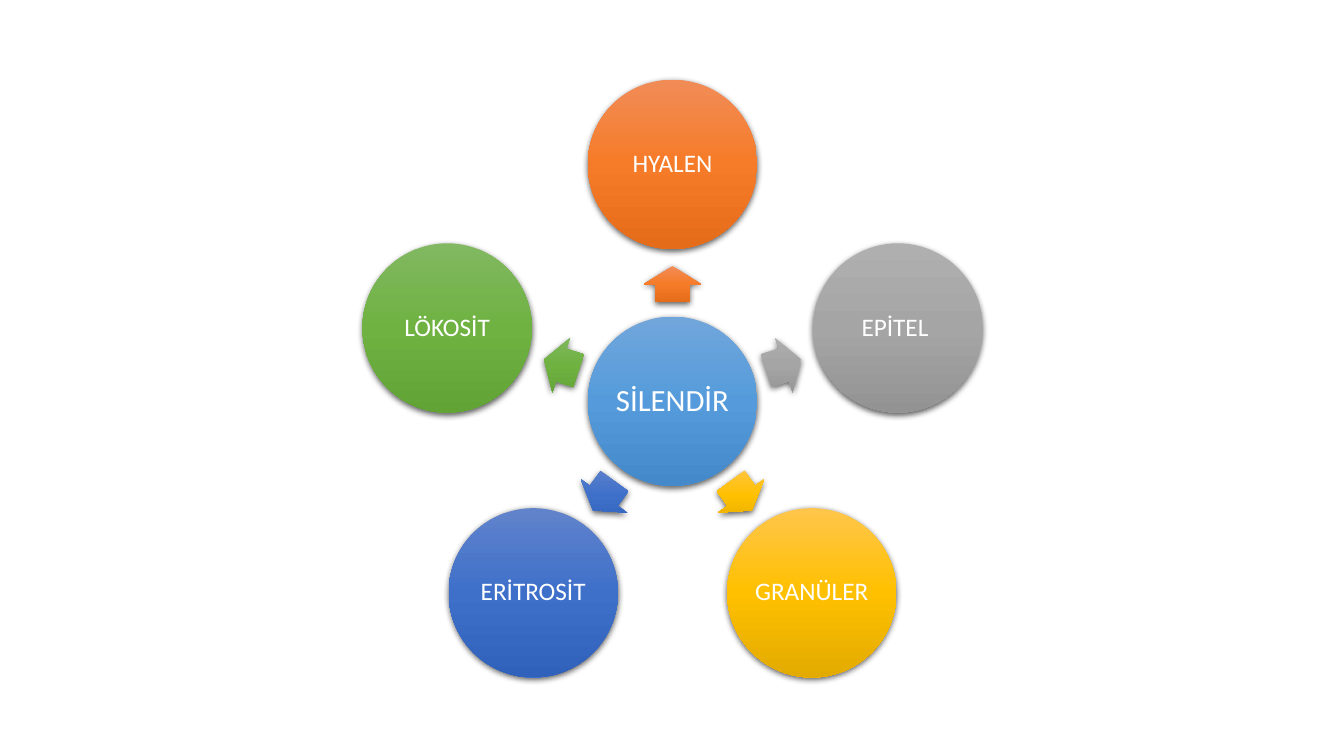
from math import cos, radians, sin

from lxml import etree
from pptx import Presentation
from pptx.dml.color import RGBColor
from pptx.enum.shapes import MSO_SHAPE as SHAPE
from pptx.enum.text import MSO_ANCHOR as ANCHOR, PP_ALIGN as ALIGN
from pptx.oxml.ns import qn
from pptx.util import Inches, Pt

HUB = ("SİLENDİR", ("71A6DB", "559BDB", "448ACA"))
# Clockwise from the top
CASTS = [
    ("HYALEN", ("F18C57", "F67B28", "E56C19")),
    ("EPİTEL ", ("AFAFAF", "A5A5A5", "939393")),
    ("GRANÜLER", ("FFC64B", "FFC000", "E3AB00")),
    ("ERİTROSİT", ("6183CB", "3E70CA", "3062BB")),
    ("LÖKOSİT", ("81B861", "6FB242", "62A336")),
]
FONT, WHITE = "Calibri", "FFFFFF"
CENTER_X, CENTER_Y = 6.67, 3.98
CIRCLE = 1.68
ARROW_W, ARROW_H = 0.36, 0.57
CIRCLE_ORBIT, ARROW_ORBIT = 2.35, 1.16


def sub(parent, tag, **attrs):
    return etree.SubElement(parent, qn(tag), {k: str(v) for k, v in attrs.items()})


def paint(sp, colors):
    """Vertical three-stop gradient that stays upright, no outline, soft shadow."""
    sp.line.fill.background()
    sp.shadow.inherit = False
    spPr = sp._element.spPr
    grad = sub(spPr, "a:gradFill", rotWithShape=0)
    stops = sub(grad, "a:gsLst")
    for i, color in enumerate(colors):
        sub(sub(stops, "a:gs", pos=i * 50000), "a:srgbClr", val=color)
    sub(grad, "a:lin", ang=5400000, scaled=0)
    spPr.find(qn("a:ln")).addprevious(grad)
    shadow = sub(spPr.find(qn("a:effectLst")), "a:outerShdw", blurRad=Pt(4.5),
                 dist=Pt(1.5), dir=5400000, algn="ctr", rotWithShape=0)
    sub(sub(shadow, "a:srgbClr", val="000000"), "a:alpha", val=63000)


def add_centered(s, kind, x, y, w, h, colors):
    sp = s.shapes.add_shape(kind, Inches(x - w / 2), Inches(y - h / 2),
                            Inches(w), Inches(h))
    paint(sp, colors)
    return sp


def add_circle(s, x, y, label, colors, size):
    sp = add_centered(s, SHAPE.OVAL, x, y, CIRCLE, CIRCLE, colors)
    tf = sp.text_frame
    tf.word_wrap = False
    tf.vertical_anchor = ANCHOR.MIDDLE
    tf.margin_left = tf.margin_right = Inches(0.03)
    tf.margin_top = tf.margin_bottom = Inches(0.03)
    p = tf.paragraphs[0]
    p.alignment = ALIGN.CENTER
    p.line_spacing = 0.9
    r = p.add_run()
    r.text = label
    r.font.name, r.font.size = FONT, Pt(size)
    r.font.color.rgb = RGBColor.from_string(WHITE)


def orbit(angle, radius):
    a = radians(angle)
    return CENTER_X + radius * cos(a), CENTER_Y + radius * sin(a)


def main():
    prs = Presentation()
    prs.slide_width, prs.slide_height = Inches(13.33), Inches(7.5)
    s = prs.slides.add_slide(prs.slide_layouts[6])
    add_circle(s, CENTER_X, CENTER_Y, *HUB, 22)
    for i, (label, colors) in enumerate(CASTS):
        angle = (270 + i * 360 / len(CASTS)) % 360
        arrow = add_centered(s, SHAPE.RIGHT_ARROW, *orbit(angle, ARROW_ORBIT),
                             ARROW_W, ARROW_H, colors)
        arrow.rotation = angle
        arrow.adjustments[0], arrow.adjustments[1] = 0.6, 0.5
        add_circle(s, *orbit(angle, CIRCLE_ORBIT), label, colors, 18)
    prs.save("out.pptx")


if __name__ == "__main__":
    main()
